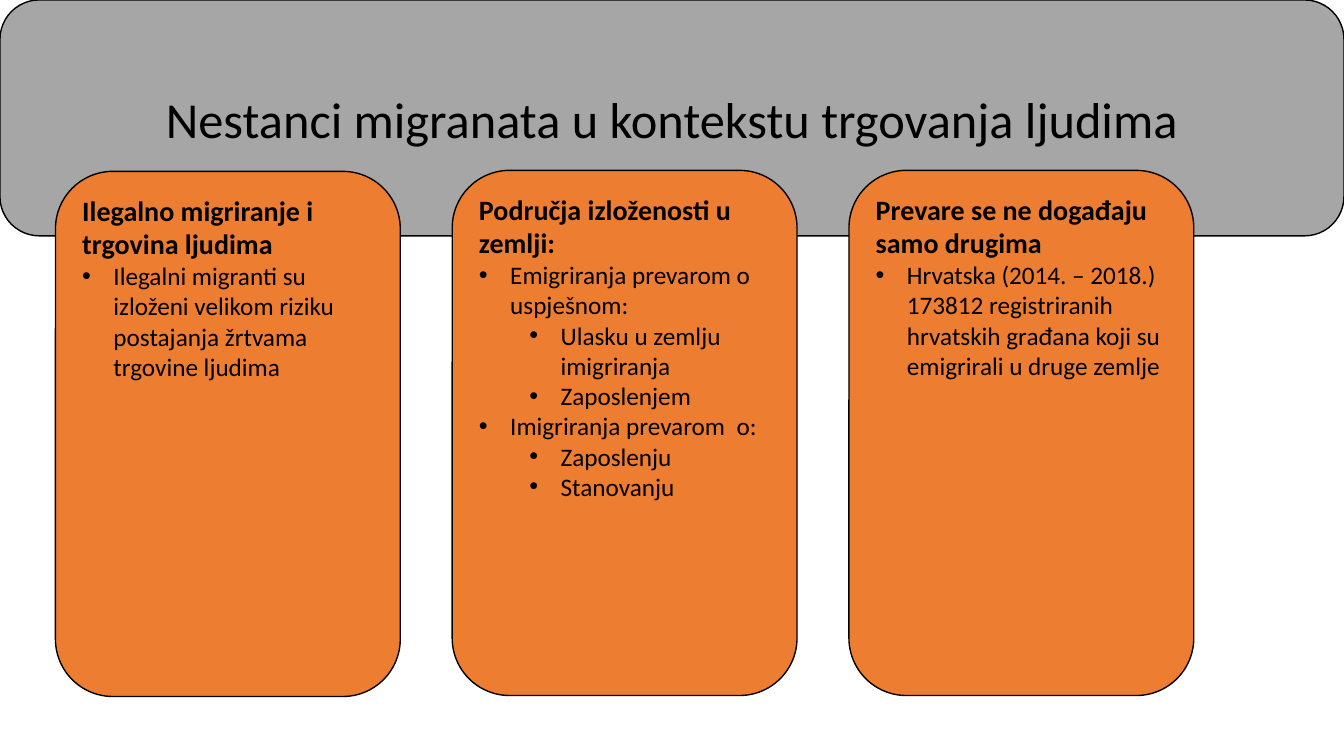
"""Builds the slide on missing migrants and human trafficking."""
from lxml import etree
from pptx import Presentation
from pptx.dml.color import RGBColor
from pptx.enum.shapes import MSO_SHAPE
from pptx.enum.text import MSO_ANCHOR, PP_ALIGN
from pptx.oxml.ns import qn
from pptx.util import Inches, Pt

ROUNDED = MSO_SHAPE.ROUNDED_RECTANGLE
TOP, MIDDLE = MSO_ANCHOR.TOP, MSO_ANCHOR.MIDDLE
LEFT, CENTER = PP_ALIGN.LEFT, PP_ALIGN.CENTER

COLORS = {"banner": "A6A6A6", "card": "ED7D31", "ink": "000000"}
FONT = "Calibri"
CARD_LEFT, CARD_STEP = 0.55, 3.935
CARD_WIDTH, CARD_HEIGHT = 3.42, 5.21
BULLET_INDENT, LEVEL_STEP = 0.31, 0.5

TITLE = "Nestanci migranata u kontekstu trgovanja ljudima"
CARDS = [
    (1.7, "Ilegalno migriranje i trgovina ljudima", [
        (0, "Ilegalni migranti su izloženi velikom riziku postajanja žrtvama trgovine ljudima"),
    ]),
    (1.69, "Područja izloženosti u zemlji:", [
        (0, "Emigriranja prevarom o uspješnom:"),
        (1, "Ulasku u zemlju imigriranja"),
        (1, "Zaposlenjem"),
        (0, "Imigriranja prevarom  o:"),
        (1, "Zaposlenju"),
        (1, "Stanovanju"),
    ]),
    (1.69, "Prevare se ne događaju samo drugima", [
        (0, "Hrvatska (2014. – 2018.) 173812 registriranih hrvatskih građana koji su "
            "emigrirali u druge zemlje"),
    ]),
]


def write(para, text, size=18, bold=False, align=LEFT, level=None):
    para.alignment = align
    span = para.add_run()
    span.text = text
    span.font.name = FONT
    span.font.size = Pt(size)
    span.font.bold = bold
    span.font.color.rgb = RGBColor.from_string(COLORS["ink"])
    if level is not None:
        para.level = level
        properties = para._p.get_or_add_pPr()
        properties.set("marL", str(Inches(BULLET_INDENT + level * LEVEL_STEP)))
        properties.set("indent", str(-Inches(BULLET_INDENT)))
        etree.SubElement(properties, qn("a:buFont")).set("typeface", "Arial")
        etree.SubElement(properties, qn("a:buChar")).set("char", "•")


class SlideBuilder:
    def __init__(self, page):
        self.page = page

    def panel(self, left, top, width, height, color, anchor):
        box = self.page.shapes.add_shape(
            ROUNDED, Inches(left), Inches(top), Inches(width), Inches(height))
        box.shadow.inherit = False
        box.fill.solid()
        box.fill.fore_color.rgb = RGBColor.from_string(COLORS[color])
        box.line.color.rgb = RGBColor.from_string(COLORS["ink"])
        box.line.width = Pt(1)
        box.text_frame.word_wrap = True
        box.text_frame.vertical_anchor = anchor
        return box.text_frame

    def banner(self, text):
        frame = self.panel(0, 0, 13.33, 2.34, "banner", MIDDLE)
        write(frame.paragraphs[0], text, size=36, align=CENTER)

    def card(self, left, top, heading, bullets):
        frame = self.panel(left, top, CARD_WIDTH, CARD_HEIGHT, "card", TOP)
        write(frame.paragraphs[0], heading, size=20, bold=True)
        for level, text in bullets:
            write(frame.add_paragraph(), text, level=level)


def main():
    deck = Presentation()
    deck.slide_width, deck.slide_height = Inches(13.33), Inches(7.5)
    builder = SlideBuilder(deck.slides.add_slide(deck.slide_layouts[6]))
    builder.banner(TITLE)
    for column, (top, heading, bullets) in enumerate(CARDS):
        builder.card(CARD_LEFT + column * CARD_STEP, top, heading, bullets)
    deck.save("out.pptx")


if __name__ == "__main__":
    main()
